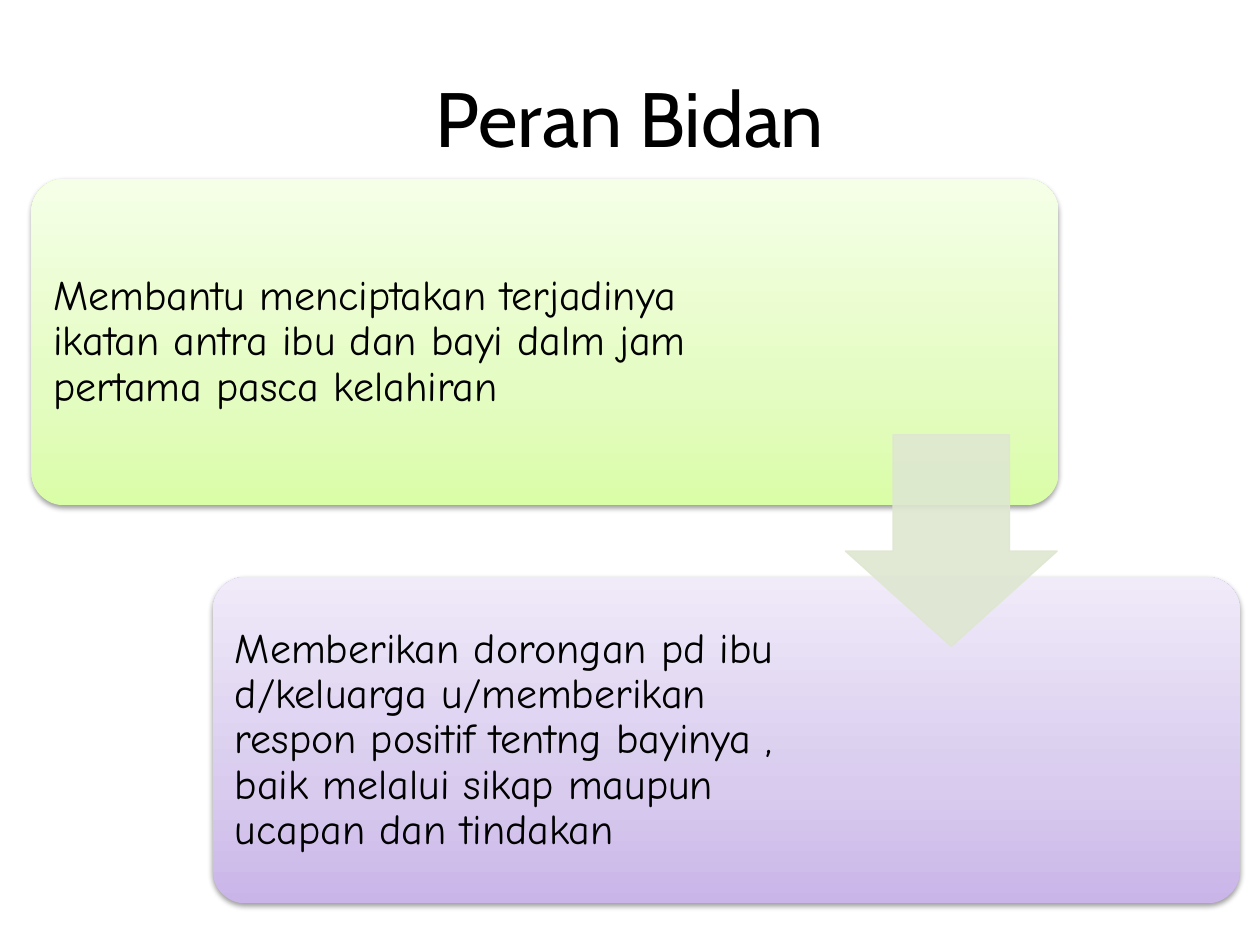
import copy
from dataclasses import dataclass

import lxml.etree
import pptx
import pptx.dml.color
import pptx.enum.shapes
import pptx.enum.text
import pptx.oxml.ns
import pptx.util

Pt = pptx.util.Pt
Color = pptx.dml.color.RGBColor
Shapes = pptx.enum.shapes.MSO_SHAPE
Align = pptx.enum.text.PP_ALIGN
Anchor = pptx.enum.text.MSO_ANCHOR
qn = pptx.oxml.ns.qn


@dataclass(frozen=True)
class Theme:
    text: str = "000000"
    arrow: str = "DEE7D1"
    green: tuple = ("DAFDA7", "E4FCC2", "F5FFE7")
    purple: tuple = ("C9B5E8", "D8CBEE", "F0EAF9")
    stops: tuple = (0, 0.35, 1)
    title_font: str = "Cabin"
    body_font: str = "Comic Neue"
    title_size: float = 44
    body_size: float = 24


@dataclass(frozen=True)
class Step:
    left: float
    top: float
    text_width: float
    colors: tuple
    text: str


THEME = Theme()
CARD_WIDTH, CARD_HEIGHT, CARD_INSET = 586.8, 186.5, 5.46
STEPS = (
    Step(18, 102.24, 393.84, THEME.green,
         "Membantu menciptakan terjadinya ikatan antra ibu dan bayi dalm jam "
         "pertama pasca kelahiran"),
    Step(121.68, 329.76, 350.64, THEME.purple,
         "Memberikan dorongan pd ibu d/keluarga u/memberikan respon positif "
         "tentng bayinya , baik melalui sikap maupun ucapan dan tindakan"),
)


def set_values(target, values: dict) -> None:
    for name, value in values.items():
        setattr(target, name, value)


def write_text(frame, text: str, font: str, size: float, para_format: dict) -> None:
    set_values(frame, {"word_wrap": True, "vertical_anchor": Anchor.MIDDLE})
    para = frame.paragraphs[0]
    set_values(para, para_format)
    span = para.add_run()
    span.text = text
    set_values(span.font, {"name": font, "size": Pt(size)})
    span.font.color.rgb = Color.from_string(THEME.text)


def add_shadow(shape) -> None:
    shape.shadow.inherit = False
    effects = shape._element.spPr.find(qn("a:effectLst"))
    shadow = lxml.etree.SubElement(
        effects, qn("a:outerShdw"), blurRad=str(Pt(3.1)), dist=str(Pt(1.6)),
        dir="5400000", rotWithShape="0")
    color = lxml.etree.SubElement(shadow, qn("a:srgbClr"), val="000000")
    lxml.etree.SubElement(color, qn("a:alpha"), val="38000")


def fill_gradient(shape, colors: tuple) -> None:
    shape.fill.gradient()
    shape.fill.gradient_angle = 90
    stop_list = next(shape._element.spPr.iter(qn("a:gsLst")))
    stop_list.append(copy.deepcopy(stop_list[-1]))
    for stop, position, color in zip(shape.fill.gradient_stops, THEME.stops, colors):
        stop.position = position
        stop.color.rgb = Color.from_string(color)


def add_step(page, step: Step) -> None:
    card = page.shapes.add_shape(
        Shapes.ROUNDED_RECTANGLE, Pt(step.left), Pt(step.top),
        Pt(CARD_WIDTH), Pt(CARD_HEIGHT))
    card.adjustments[0] = 0.1
    fill_gradient(card, step.colors)
    card.line.fill.background()
    add_shadow(card)

    box = page.shapes.add_textbox(
        Pt(step.left + CARD_INSET), Pt(step.top + CARD_INSET),
        Pt(step.text_width), Pt(CARD_HEIGHT - 2 * CARD_INSET))
    frame = box.text_frame
    set_values(frame, {f"margin_{side}": Pt(7.2)
                       for side in ("left", "top", "right", "bottom")})
    write_text(frame, step.text, THEME.body_font, THEME.body_size,
               {"alignment": Align.LEFT, "line_spacing": 0.9, "space_after": Pt(8.4)})


def add_arrow(page, left: float, top: float, size: float) -> None:
    arrow = page.shapes.add_shape(
        Shapes.DOWN_ARROW, Pt(left), Pt(top), Pt(size), Pt(size))
    arrow.adjustments[0], arrow.adjustments[1] = 0.55, 0.45
    arrow.shadow.inherit = False
    arrow.line.width = Pt(0.75)
    for fill in (arrow.fill, arrow.line.fill):
        fill.solid()
        fill.fore_color.rgb = Color.from_string(THEME.arrow)
    for color in arrow._element.spPr.iter(qn("a:srgbClr")):
        lxml.etree.SubElement(color, qn("a:alpha"), val="90000")


def main() -> None:
    deck = pptx.Presentation()
    set_values(deck, {"slide_width": Pt(720), "slide_height": Pt(540)})
    page = deck.slides.add_slide(deck.slide_layouts[5])

    # Title
    title = page.shapes.title
    set_values(title, {"left": Pt(36), "top": Pt(21.6),
                       "width": Pt(648), "height": Pt(90)})
    write_text(title.text_frame, "Peran Bidan", THEME.title_font, THEME.title_size,
               {"alignment": Align.CENTER})

    # Staggered steps, joined by the arrow
    for step in STEPS:
        add_step(page, step)
    add_arrow(page, 483.12, 248.4, 121)

    deck.save("out.pptx")


if __name__ == "__main__":
    main()
